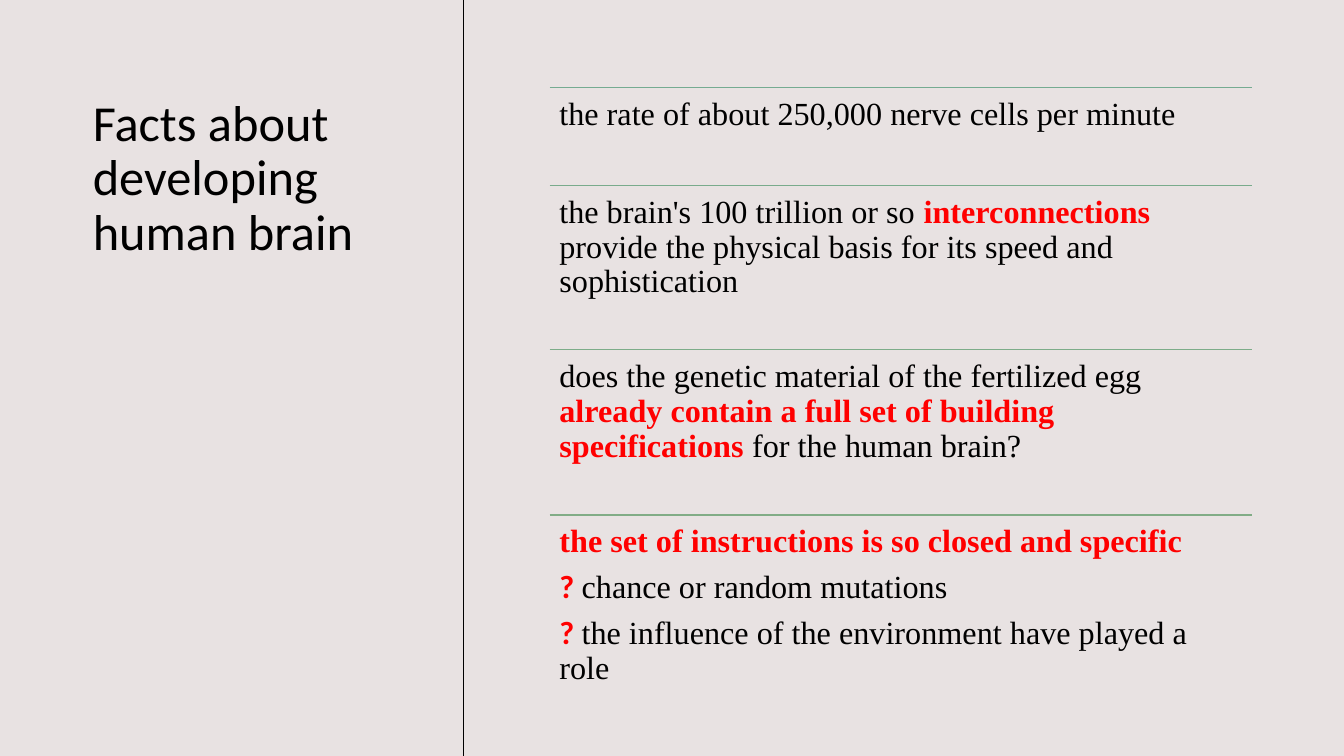
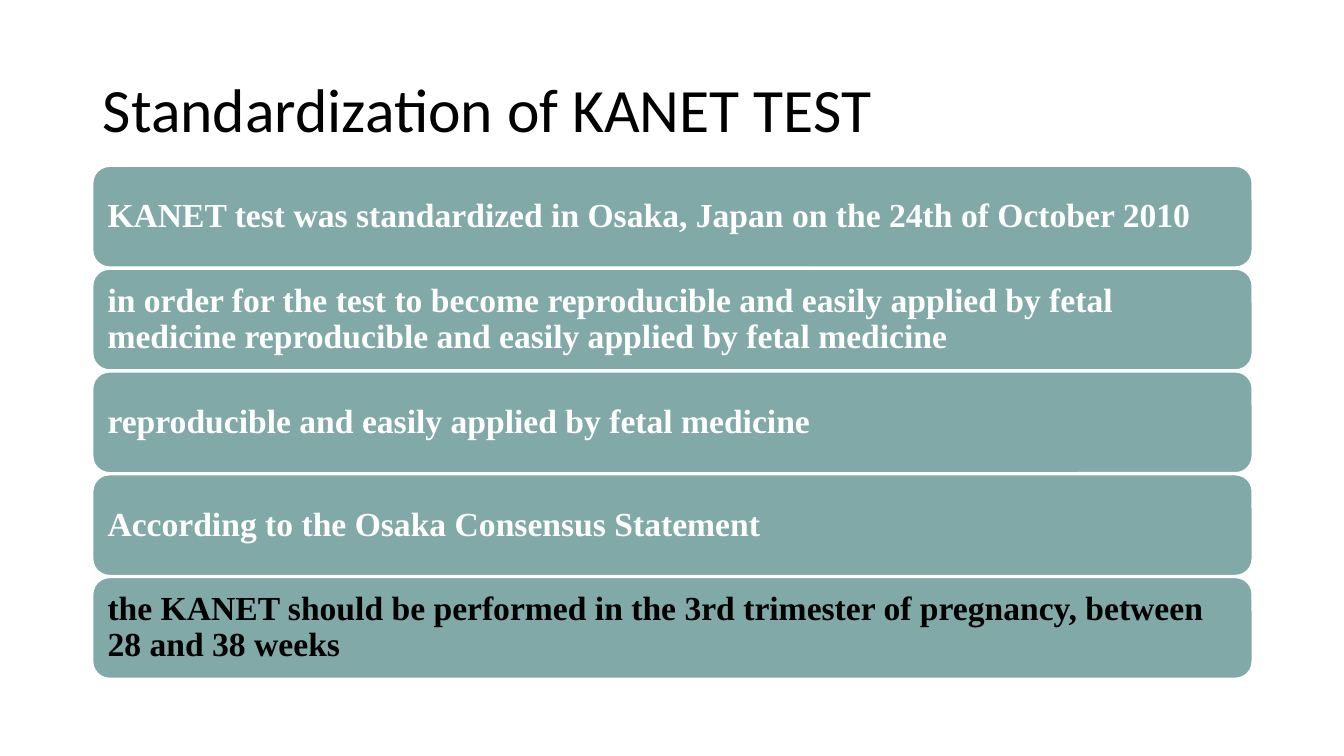
from lxml import etree
from pptx import Presentation
from pptx.dml.color import RGBColor
from pptx.enum import shapes, text
from pptx.oxml.ns import qn
from pptx.util import Inches, Pt

COLORS = {
    "ink": "000000",
    "accent": "FF0000",
    "paper": "FFFFFF",
    "blush": "E8E2E2",
    "teal": "80A9A7",
}
TITLE_FONT = "Calibri"
BODY_FONT = "Times New Roman"
TITLE_ONLY = 5

# Each fact: rule colour, row height, paragraphs made of (words, is_key) runs
FACTS = [
    ("75AB91", 0.97, [[("the rate of about 250,000 nerve cells per minute", False)]]),
    ("79AB8C", 1.63, [[
        ("the brain's 100 trillion or so ", False),
        ("interconnections", True),
        (" provide the physical basis for its speed and sophistication", False),
    ]]),
    ("7DAC89", 1.64, [[
        ("does the genetic material of the fertilized egg ", False),
        ("already contain a full set of building specifications", True),
        (" for the human brain?", False),
    ]]),
    ("81AC86", 1.64, [
        [("the set of instructions is so closed and specific", True)],
        [("? ", True), ("chance or random mutations", False)],
        [("? ", True), ("the influence of the environment have played a role", False)],
    ]),
]

STATEMENTS = [
    ("KANET test was standardized in Osaka, Japan on the 24th of October 2010", "paper"),
    ("in order for the test to become reproducible and easily applied by fetal medicine "
     "reproducible and easily applied by fetal medicine", "paper"),
    ("reproducible and easily applied by fetal medicine", "paper"),
    ("According to the Osaka Consensus Statement", "paper"),
    ("the KANET should be performed in the 3rd trimester of pregnancy, "
     "between 28 and 38 weeks", "ink"),
]


def rgb(color):
    return RGBColor.from_string(COLORS.get(color, color))


def style_font(font, name, size, color, bold=False):
    font.name, font.size, font.bold = name, Pt(size), bold
    font.color.rgb = rgb(color)


def style_frame(frame, anchor):
    frame.word_wrap = True
    frame.auto_size = text.MSO_AUTO_SIZE.NONE
    frame.vertical_anchor = anchor
    frame.margin_left = frame.margin_right = Inches(0.1)
    frame.margin_top = frame.margin_bottom = Inches(0.1)


def style_paragraph(paragraph, space_after=8):
    paragraph.alignment = text.PP_ALIGN.LEFT
    paragraph.line_spacing = 0.9
    paragraph.space_after = Pt(space_after)


def add_titled_slide(deck, title, box, size, anchor, background):
    slide = deck.slides.add_slide(deck.slide_layouts[TITLE_ONLY])
    slide.background.fill.solid()
    slide.background.fill.fore_color.rgb = rgb(background)
    heading = slide.shapes.title
    heading.left, heading.top, heading.width, heading.height = map(Inches, box)
    frame = heading.text_frame
    frame.text = title
    style_frame(frame, anchor)
    frame.margin_top = frame.margin_bottom = Inches(0.05)
    style_paragraph(frame.paragraphs[0], space_after=0)
    style_font(frame.paragraphs[0].runs[0].font, TITLE_FONT, size, "ink")
    return slide


def add_rule(slide, start, end, color, width):
    rule = slide.shapes.add_connector(
        shapes.MSO_CONNECTOR.STRAIGHT, *map(Inches, start + end))
    rule.line.color.rgb = rgb(color)
    rule.line.width = Pt(width)
    etree.SubElement(rule._element.spPr, qn("a:effectLst"))


def add_fact(slide, left, top, width, height, paragraphs):
    fact = slide.shapes.add_textbox(*map(Inches, (left, top, width, height)))
    frame = fact.text_frame
    style_frame(frame, text.MSO_ANCHOR.TOP)
    for index, parts in enumerate(paragraphs):
        paragraph = frame.add_paragraph() if index else frame.paragraphs[0]
        style_paragraph(paragraph)
        for words, is_key in parts:
            run = paragraph.add_run()
            run.text = words
            style_font(run.font, TITLE_FONT if words == "? " else BODY_FONT, 23,
                       "accent" if is_key else "ink", is_key)


def add_statement(slide, left, top, width, height, words, color):
    bar = slide.shapes.add_shape(
        shapes.MSO_SHAPE.ROUNDED_RECTANGLE, *map(Inches, (left, top, width, height)))
    bar.shadow.inherit = False
    bar.fill.solid()
    bar.fill.fore_color.rgb = rgb("teal")
    bar.line.color.rgb = rgb("paper")
    bar.line.width = Pt(1)
    frame = bar.text_frame
    frame.text = words
    style_frame(frame, text.MSO_ANCHOR.MIDDLE)
    style_paragraph(frame.paragraphs[0])
    style_font(frame.paragraphs[0].runs[0].font, BODY_FONT, 24, color, True)


def build_facts(deck):
    slide = add_titled_slide(deck, "Facts about developing human brain",
                             (0.82, 0.92, 3.39, 5.67), 36, text.MSO_ANCHOR.TOP, "blush")
    add_rule(slide, (4.6, 7.5), (4.6, 0), "ink", 0.5)
    left, top, width = 5.45, 0.87, 6.97
    for color, height, paragraphs in FACTS:
        add_rule(slide, (left, top), (left + width, top), color, 1)
        add_fact(slide, left, top, width, height, paragraphs)
        top += height


def build_standardization(deck):
    slide = add_titled_slide(deck, "Standardization of KANET TEST",
                             (0.92, 0.28, 11.5, 1.22), 44, text.MSO_ANCHOR.BOTTOM, "paper")
    first_top, height, gap = 1.65, 1.0, 0.02
    for row, (words, color) in enumerate(STATEMENTS):
        add_statement(slide, 0.92, first_top + row * (height + gap), 11.5, height,
                      words, color)


def main():
    deck = Presentation()
    deck.slide_width, deck.slide_height = Inches(13.33), Inches(7.5)
    build_facts(deck)
    build_standardization(deck)
    deck.save("out.pptx")


if __name__ == "__main__":
    main()
